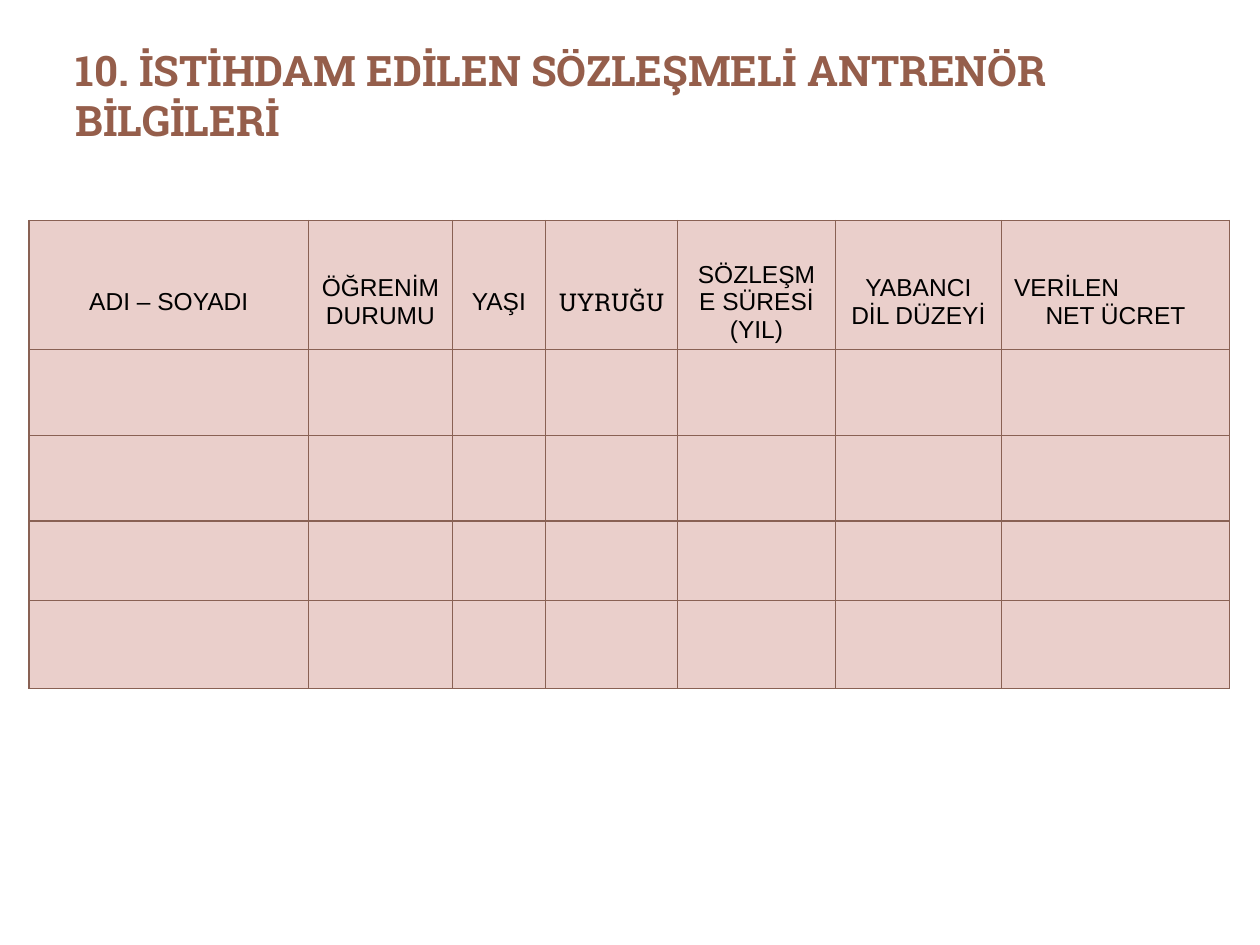
from dataclasses import dataclass

from lxml.etree import SubElement
from pptx import Presentation
from pptx.dml.color import RGBColor
from pptx.enum.text import MSO_ANCHOR as Anchor, PP_ALIGN as Align
from pptx.oxml.ns import qn
from pptx.util import Inches, Pt


@dataclass(frozen=True)
class Theme:
    heading: str = "955E4B"
    ink: str = "000000"
    cell: str = "EACFCB"
    border: str = "896154"
    serif: str = "Roboto Slab"
    sans: str = "Arial"
    title_size: int = 24
    table_size: int = 14
    border_width: float = 0.75


THEME = Theme()
COLUMN_WIDTHS = [2.22, 1.14, 0.74, 1.05, 1.25, 1.32, 1.81]
ROW_HEIGHTS = [1.02, 0.68, 0.68, 0.63, 0.7]
HEADERS = [
    "ADI – SOYADI",
    "ÖĞRENİM DURUMU",
    "YAŞI",
    "UYRUĞU",
    "SÖZLEŞME SÜRESİ (YIL)",
    "YABANCI DİL DÜZEYİ",
    "VERİLEN\nNET ÜCRET",
]
SERIF_HEADERS = {"UYRUĞU"}
SPLIT_HEADERS = {"VERİLEN\nNET ÜCRET": [Align.LEFT, Align.CENTER]}


def write(frame, text, *, font, size, color, bold=False, aligns=(Align.LEFT,)):
    """Write one paragraph per line of text, each with its own alignment."""
    frame.text = text
    for paragraph, align in zip(frame.paragraphs, aligns):
        paragraph.alignment = align
        for run in paragraph.runs:
            run.font.name = font
            run.font.size = Pt(size)
            run.font.bold = bold
            run.font.color.rgb = RGBColor.from_string(color)


def outline(cell, color, width):
    properties = cell._tc.get_or_add_tcPr()
    for position, side in enumerate(("a:lnL", "a:lnR", "a:lnT", "a:lnB")):
        line = properties.makeelement(qn(side), {"w": str(Pt(width))})
        fill = SubElement(line, qn("a:solidFill"))
        SubElement(fill, qn("a:srgbClr"), val=color)
        properties.insert(position, line)


class SlideBuilder:
    def __init__(self, slide, theme):
        self.slide = slide
        self.theme = theme

    def title(self, text, left, top, width, height):
        heading = self.slide.shapes.title
        heading.left, heading.top = Inches(left), Inches(top)
        heading.width, heading.height = Inches(width), Inches(height)
        frame = heading.text_frame
        frame.word_wrap = True
        frame.vertical_anchor = Anchor.TOP
        write(frame, text, font=self.theme.serif, size=self.theme.title_size,
              color=self.theme.heading, bold=True)

    def table(self, headers, widths, heights, left, top):
        table = self.slide.shapes.add_table(
            len(heights), len(widths), Inches(left), Inches(top),
            Inches(sum(widths)), Inches(sum(heights))).table
        for column, width in zip(table.columns, widths):
            column.width = Inches(width)
        for row, height in zip(table.rows, heights):
            row.height = Inches(height)
        for cell in table.iter_cells():
            cell.fill.solid()
            cell.fill.fore_color.rgb = RGBColor.from_string(self.theme.cell)
            outline(cell, self.theme.border, self.theme.border_width)
        for cell, header in zip(table.rows[0].cells, headers):
            self.header(cell, header)

    def header(self, cell, text):
        cell.vertical_anchor = Anchor.MIDDLE
        cell.margin_top = Inches(0.32)
        font = self.theme.serif if text in SERIF_HEADERS else self.theme.sans
        write(cell.text_frame, text, font=font, size=self.theme.table_size,
              color=self.theme.ink,
              aligns=SPLIT_HEADERS.get(text, [Align.CENTER]))


def main():
    deck = Presentation()
    deck.slide_width, deck.slide_height = Inches(10), Inches(7.5)
    title_only = deck.slide_layouts[5]
    builder = SlideBuilder(deck.slides.add_slide(title_only), THEME)
    builder.title("10. İSTİHDAM EDİLEN SÖZLEŞMELİ ANTRENÖR BİLGİLERİ",
                  0.5, 0.3, 9, 1.25)
    builder.table(HEADERS, COLUMN_WIDTHS, ROW_HEIGHTS, 0.23, 1.75)
    deck.save("out.pptx")


if __name__ == "__main__":
    main()
